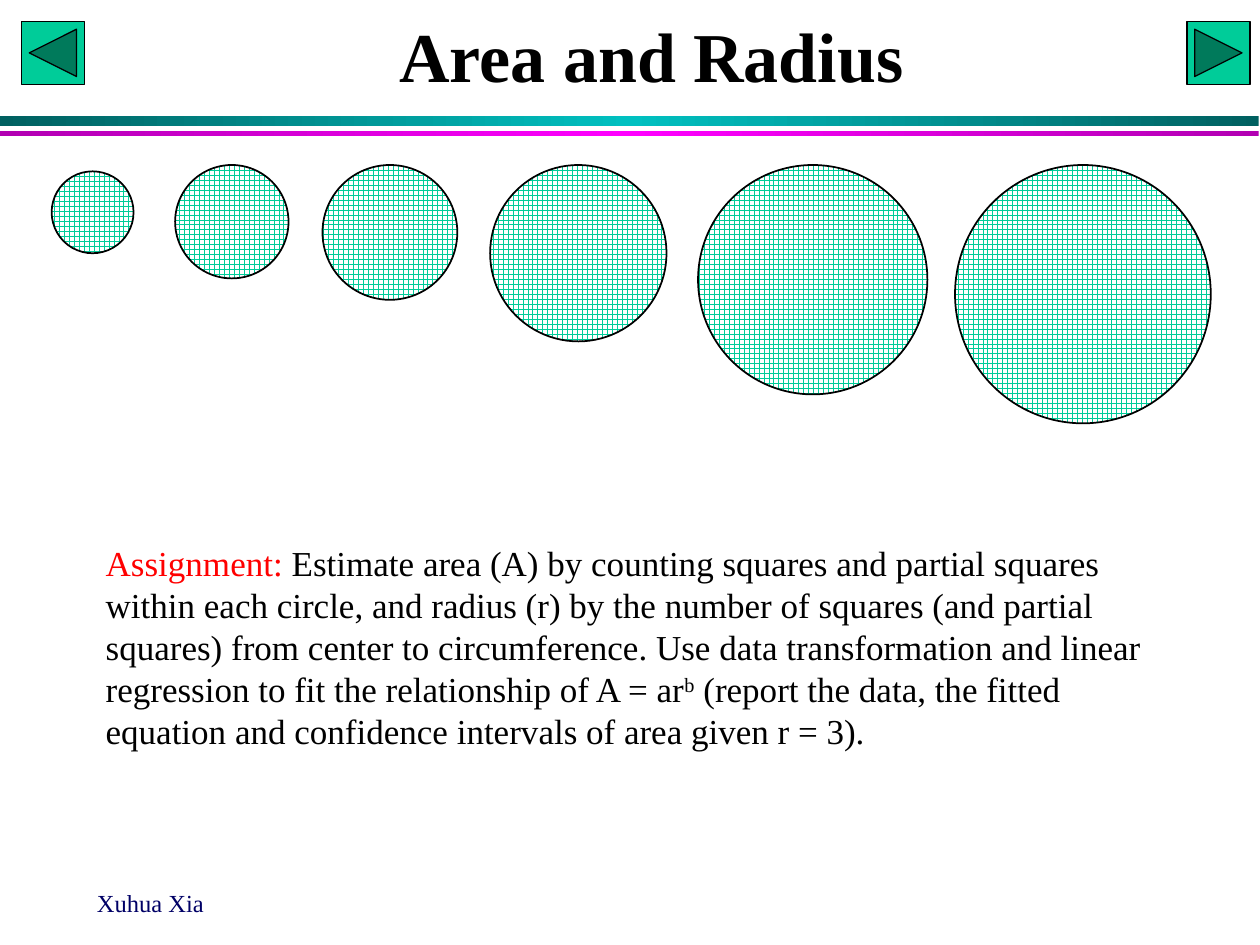
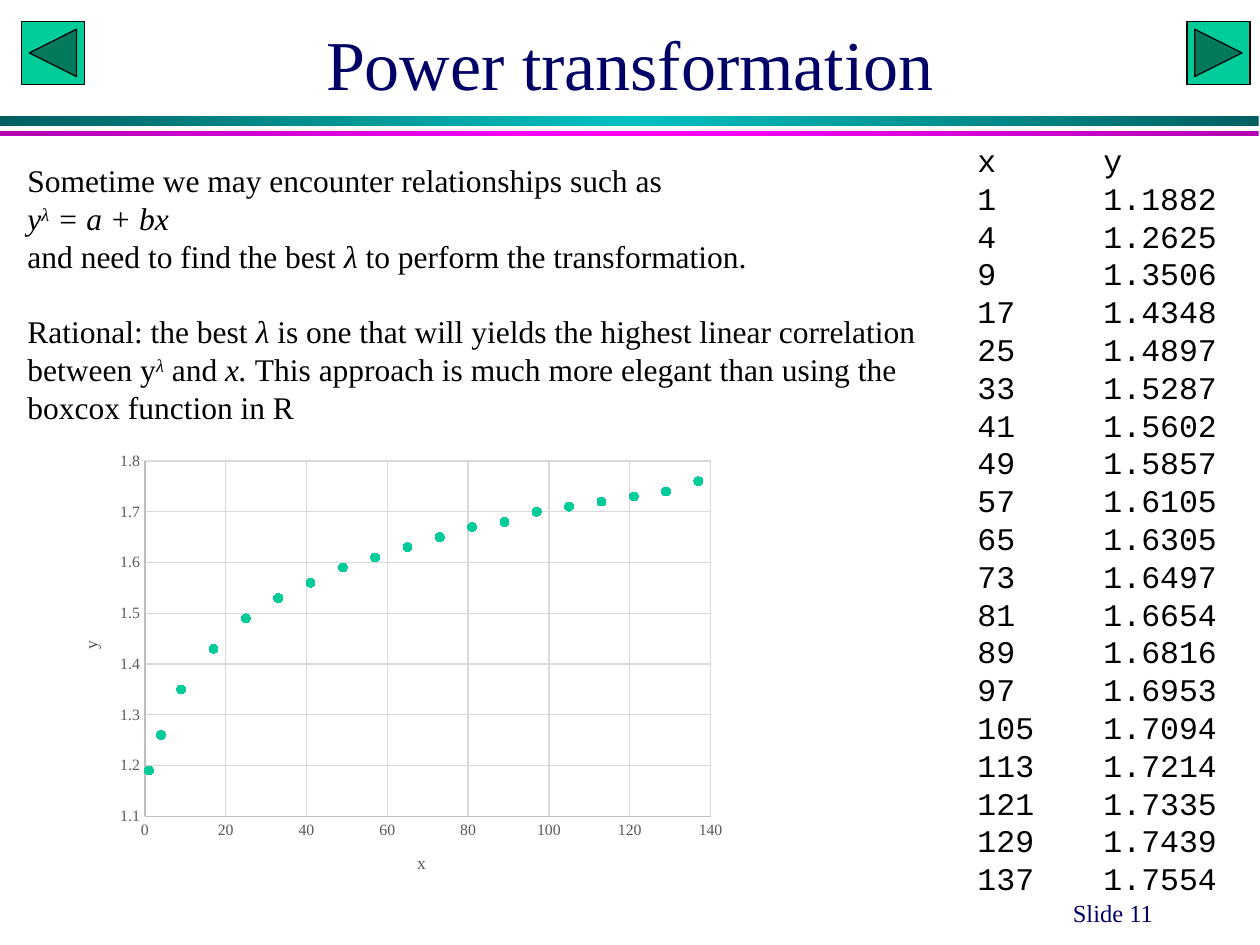
from lxml import etree
from pptx import Presentation
from pptx.chart.data import XyChartData
from pptx.dml.color import RGBColor
from pptx.enum.chart import XL_CHART_TYPE, XL_MARKER_STYLE, XL_TICK_MARK
from pptx.enum.dml import MSO_PATTERN
from pptx.enum.shapes import MSO_SHAPE
from pptx.enum.text import MSO_ANCHOR, MSO_AUTO_SIZE, PP_ALIGN
from pptx.oxml import parse_xml
from pptx.oxml.ns import nsdecls
from pptx.util import Inches, Pt

BLACK = RGBColor(0x00, 0x00, 0x00)
WHITE = RGBColor(0xFF, 0xFF, 0xFF)
RED = RGBColor(0xFF, 0x00, 0x00)
NAVY = RGBColor(0x00, 0x00, 0x66)
GREEN = RGBColor(0x00, 0xCC, 0x99)
GRID_GRAY = RGBColor(0xD9, 0xD9, 0xD9)
AXIS_GRAY = RGBColor(0xBF, 0xBF, 0xBF)
LABEL_GRAY = RGBColor(0x59, 0x59, 0x59)
TEAL_DARK, TEAL = RGBColor(0x00, 0x60, 0x60), RGBColor(0x00, 0xC0, 0xC0)
PURPLE, MAGENTA = RGBColor(0xB2, 0x00, 0xB2), RGBColor(0xFF, 0x00, 0xFF)

SERIF, MONO = "Times New Roman", "Courier New"
LEFT, CENTER, RIGHT = PP_ALIGN.LEFT, PP_ALIGN.CENTER, PP_ALIGN.RIGHT
LINE_HEIGHT = 1.2
TITLE_ONLY = 5

# Bands: top, height, edge colour, middle colour
BANDS = [(0.92, 0.08, TEAL_DARK, TEAL), (1.04, 0.04, PURPLE, MAGENTA)]
BUTTONS = [(0.17, MSO_SHAPE.ACTION_BUTTON_BACK_OR_PREVIOUS),
           (9.42, MSO_SHAPE.ACTION_BUTTON_FORWARD_OR_NEXT)]

# Circles: left, top, width, height
CIRCLES = [(0.41, 1.36, 0.65, 0.65), (1.39, 1.31, 0.9, 0.9),
           (2.56, 1.31, 1.07, 1.07), (3.89, 1.31, 1.4, 1.4),
           (5.54, 1.31, 1.82, 1.82), (7.58, 1.31, 2.03, 2.05)]

# Paragraphs are lists of (text, marks): i italic, ^ superscript, ! red
ASSIGNMENT = [[
    ("Assignment: ", "!"),
    ("Estimate area (A) by counting squares and partial squares within each "
     "circle, and radius (r) by the number of squares (and partial squares) "
     "from center to circumference. Use data transformation and linear "
     "regression to fit the relationship of A = ar", ""),
    ("b", "^"),
    (" (report the data, the fitted equation and confidence intervals of "
     "area given r = 3).", ""),
]]
RELATIONSHIP = [
    [("Sometime we may encounter relationships such as", "")],
    [("y", "i"), ("λ", "i^"), (" = a + bx", "i")],
    [("and need to find the best ", ""), ("λ ", "i"),
     ("to perform the transformation.", "")],
    [("Rational: the best ", ""), ("λ", "i"),
     (" is one that will yields the highest linear correlation between y", ""),
     ("λ", "i^"), (" and", ""), (" x. ", "i"),
     ("This approach is much more elegant than using the boxcox function in R",
      "")],
]
RATIONALE = 3

POINTS = [(1, 1.1882), (4, 1.2625), (9, 1.3506), (17, 1.4348), (25, 1.4897),
          (33, 1.5287), (41, 1.5602), (49, 1.5857), (57, 1.6105),
          (65, 1.6305), (73, 1.6497), (81, 1.6654), (89, 1.6816),
          (97, 1.6953), (105, 1.7094), (113, 1.7214), (121, 1.7335),
          (129, 1.7439), (137, 1.7554)]

CHART_PLACE = (0.43, 3.53, 5.41, 3.62)
# Inner plot area within the chart, in inches
PLOT_PLACE = (0.72, 0.13, 4.49, 2.82)


def style_font(font, size, color, name=SERIF, bold=False, italic=False):
    font.name, font.size = name, Pt(size)
    font.bold, font.italic = bold, italic
    font.color.rgb = color


def add_text(page, place, paragraphs, size, color=BLACK, name=SERIF, align=LEFT):
    box = page.shapes.add_textbox(*map(Inches, place))
    frame = box.text_frame
    frame.word_wrap = True
    for index, spans in enumerate(paragraphs):
        para = frame.paragraphs[0] if index == 0 else frame.add_paragraph()
        para.alignment = align
        para.line_spacing = Pt(size * LINE_HEIGHT)
        for text, marks in spans:
            span = para.add_run()
            span.text = text
            style_font(span.font, size, RED if "!" in marks else color, name,
                       italic="i" in marks)
            if "^" in marks:
                span._r.get_or_add_rPr().set("baseline", "30000")
    return frame


def set_tab_stop(para, position):
    tabs = parse_xml(f'<a:tabLst {nsdecls("a")}>'
                     f'<a:tab pos="{Inches(position)}" algn="l"/></a:tabLst>')
    para._p.get_or_add_pPr().append(tabs)


def add_preset(page, kind, place):
    shape = page.shapes.add_shape(kind, *map(Inches, place))
    shape.shadow.inherit = False
    return shape


def set_line(line, color, width):
    line.color.rgb = color
    line.width = Pt(width)


def add_band(page, top, height, edge, middle):
    """Add a full-width strip that shades from edge to middle and back."""
    band = add_preset(page, MSO_SHAPE.RECTANGLE, (0, top, 9.99, height))
    band.line.fill.background()
    stops = "".join(
        f'<a:gs pos="{pos}"><a:srgbClr val="{color}"/></a:gs>'
        for pos, color in ((0, edge), (50000, middle), (100000, edge)))
    gradient = parse_xml(f'<a:gradFill {nsdecls("a")}><a:gsLst>{stops}</a:gsLst>'
                         '<a:lin ang="0" scaled="1"/></a:gradFill>')
    band._element.spPr.find("{*}prstGeom").addnext(gradient)


def add_page(deck, title, place, color, bold=False):
    page = deck.slides.add_slide(deck.slide_layouts[TITLE_ONLY])
    for band in BANDS:
        add_band(page, *band)
    for left, kind in BUTTONS:
        button = add_preset(page, kind, (left, 0.17, 0.5, 0.5))
        button.fill.solid()
        button.fill.fore_color.rgb = GREEN
        set_line(button.line, BLACK, 0.75)

    box = page.shapes.title
    box.left, box.top, box.width, box.height = map(Inches, place)
    frame = box.text_frame
    frame.auto_size = MSO_AUTO_SIZE.NONE
    frame.vertical_anchor = MSO_ANCHOR.MIDDLE
    para = frame.paragraphs[0]
    para.alignment = CENTER
    span = para.add_run()
    span.text = title
    style_font(span.font, 40, color, bold=bold)
    return page


def style_axis(axis, title, low, high, step):
    axis.minimum_scale, axis.maximum_scale, axis.major_unit = low, high, step
    axis.major_tick_mark = axis.minor_tick_mark = XL_TICK_MARK.NONE
    axis.has_major_gridlines = True
    set_line(axis.major_gridlines.format.line, GRID_GRAY, 0.75)
    set_line(axis.format.line, AXIS_GRAY, 0.75)
    style_font(axis.tick_labels.font, 9, LABEL_GRAY)
    span = axis.axis_title.text_frame.paragraphs[0].add_run()
    span.text = title
    style_font(span.font, 10, LABEL_GRAY)


def fix_plot_area(chart):
    """Place the inner plot area, turning inches into fractions of the chart."""
    plot_area = chart._chartSpace.chart.plotArea
    for old in plot_area.findall("{*}layout"):
        plot_area.remove(old)
    layout = parse_xml(f'<c:layout {nsdecls("c")}><c:manualLayout>'
                       '<c:layoutTarget val="inner"/><c:xMode val="edge"/>'
                       '<c:yMode val="edge"/></c:manualLayout></c:layout>')
    namespace = layout.nsmap["c"]
    chart_size = CHART_PLACE[2:] * 2
    for key, length, whole in zip("xywh", PLOT_PLACE, chart_size):
        etree.SubElement(layout[0], f"{{{namespace}}}{key}",
                         val=f"{length / whole:.4f}")
    plot_area.insert(0, layout)


def add_scatter(page):
    data = XyChartData()
    series_data = data.add_series("Series 1")
    for x, y in POINTS:
        series_data.add_data_point(x, round(y, 2))
    chart = page.shapes.add_chart(XL_CHART_TYPE.XY_SCATTER,
                                  *map(Inches, CHART_PLACE), data).chart
    style_font(chart.font, 10, BLACK)
    chart.has_legend = chart.has_title = False
    style_axis(chart.category_axis, "x", 0, 140, 20)
    style_axis(chart.value_axis, "y", 1.1, 1.8, 0.1)
    chart.value_axis.tick_labels.number_format = "0.0"
    chart.value_axis.tick_labels.number_format_is_linked = False
    chart.plots[0].vary_by_categories = False
    series = chart.plots[0].series[0]
    series.smooth = False
    series.format.line.fill.background()
    marker = series.marker
    marker.style, marker.size = XL_MARKER_STYLE.CIRCLE, 5
    marker.format.fill.solid()
    marker.format.fill.fore_color.rgb = GREEN
    set_line(marker.format.line, GREEN, 0.75)
    fix_plot_area(chart)


def add_area_page(deck):
    page = add_page(deck, "Area and Radius", (0.92, 0.08, 8.5, 0.71), BLACK, True)
    add_text(page, (0.67, 7, 2.08, 0.25), [[("Xuhua Xia", "")]], 14, NAVY)
    for place in CIRCLES:
        circle = add_preset(page, MSO_SHAPE.OVAL, place)
        circle.fill.patterned()
        circle.fill.pattern = MSO_PATTERN.LARGE_GRID
        circle.fill.fore_color.rgb = GREEN
        circle.fill.back_color.rgb = WHITE
        set_line(circle.line, BLACK, 1)
    add_text(page, (0.74, 4.25, 8.55, 1.78), ASSIGNMENT, 20)


def add_power_page(deck):
    page = add_page(deck, "Power transformation", (0.75, 0, 8.5, 1), NAVY)
    add_text(page, (7.17, 7.08, 2.08, 0.25), [[("Slide 11", "")]], 14, NAVY,
             align=RIGHT)
    rows = [("x", "y")] + [(x, f"{y:.4f}") for x, y in POINTS]
    listing = add_text(page, (7.66, 1.07, 2.34, 6.16),
                       [[(f"{x}\t{y}", "")] for x, y in rows], 18, name=MONO)
    for para in listing.paragraphs:
        set_tab_stop(para, 1)
    frame = add_text(page, (0.12, 1.23, 7.4, 2.22), RELATIONSHIP, 18)
    frame.paragraphs[RATIONALE].space_before = Pt(18 * LINE_HEIGHT)
    add_scatter(page)


def main():
    deck = Presentation()
    deck.slide_width, deck.slide_height = Inches(10), Inches(7.5)
    add_area_page(deck)
    add_power_page(deck)
    deck.save("out.pptx")


if __name__ == "__main__":
    main()
